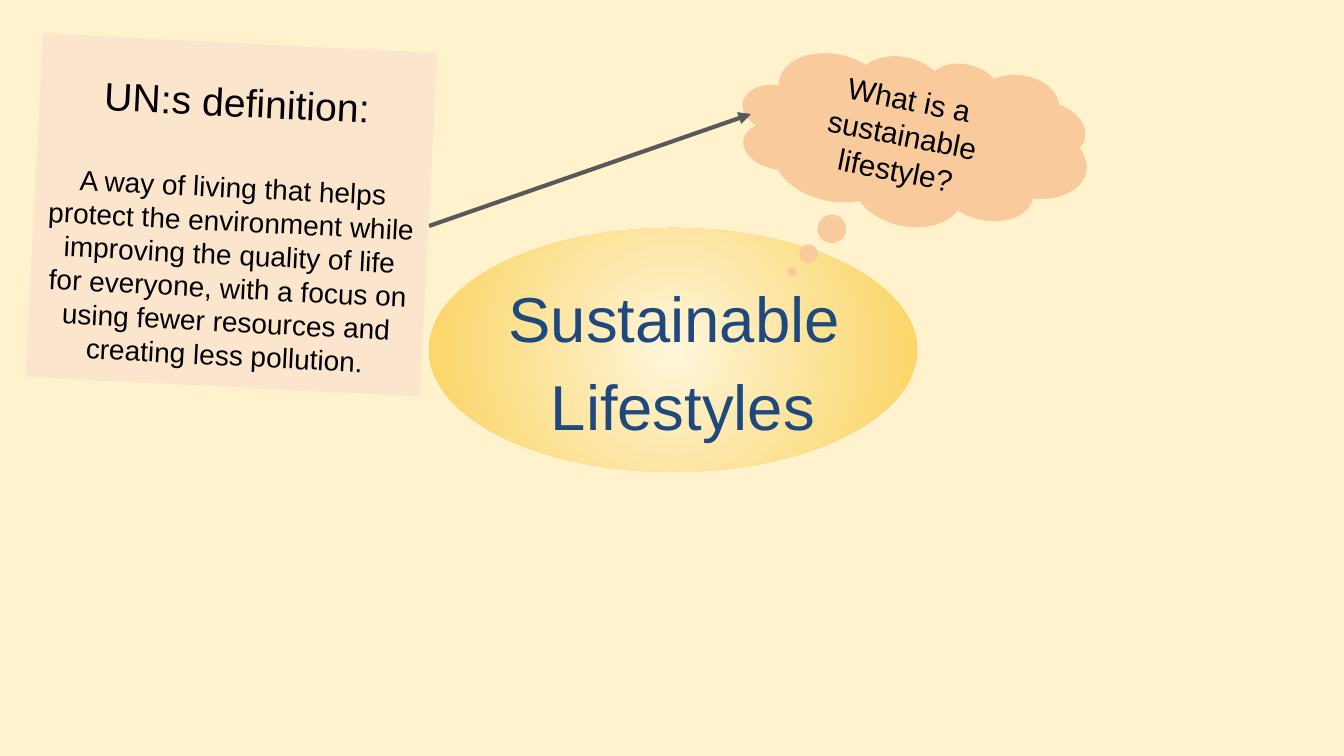
import pptx
import pptx.dml.color
import pptx.enum.shapes
import pptx.enum.text
import pptx.oxml
import pptx.oxml.ns
import pptx.util

EMU_PER_INCH = 914400
PX_PER_INCH = 134.4
SHAPES = pptx.enum.shapes.MSO_SHAPE
ANCHORS = pptx.enum.text.MSO_ANCHOR
NAMESPACE = pptx.oxml.ns.nsdecls("a")


def px(length):
    return pptx.util.Emu(round(length * EMU_PER_INCH / PX_PER_INCH))


def color(value):
    return pptx.dml.color.RGBColor.from_string(value)


class MindMap:
    """Draws the elements of a mind map on one slide in a shared style."""

    font = "Arial"
    margin = 13

    def __init__(self, presentation, background):
        self.slide = presentation.slides.add_slide(presentation.slide_layouts[6])
        self.slide.background.fill.solid()
        self.slide.background.fill.fore_color.rgb = color(background)

    def shape(self, kind, box, fill, rotation=0):
        shape = self.slide.shapes.add_shape(kind, *map(px, box))
        shape.shadow.inherit = False
        shape.rotation = rotation
        shape.line.fill.background()
        if fill:
            shape.fill.solid()
            shape.fill.fore_color.rgb = color(fill)
        return shape

    def glowing_ellipse(self, box, center, edge):
        shape = self.shape(SHAPES.OVAL, box, None)
        shape.fill.gradient()
        for stop, value in zip(shape.fill.gradient_stops, (center, edge)):
            stop.color.rgb = color(value)
        gradient = shape.element.spPr.find(pptx.oxml.ns.qn("a:gradFill"))
        gradient.remove(gradient.find(pptx.oxml.ns.qn("a:lin")))
        gradient.append(pptx.oxml.parse_xml(
            f'<a:path {NAMESPACE} path="circle">'
            '<a:fillToRect l="50000" t="50000" r="50000" b="50000"/></a:path>'))

    def text_box(self, box, paragraphs, **formats):
        shape = self.slide.shapes.add_textbox(*map(px, box))
        self.add_text(shape, paragraphs, **formats)

    def add_text(self, shape, paragraphs, text_color="000000", anchor=ANCHORS.TOP,
                 top_margin=margin):
        frame = shape.text_frame
        frame_format = {
            "word_wrap": True,
            "vertical_anchor": anchor,
            "margin_left": px(self.margin),
            "margin_right": px(self.margin),
            "margin_top": px(top_margin),
            "margin_bottom": px(self.margin),
        }
        for name, value in frame_format.items():
            setattr(frame, name, value)
        for index, (text, size, paragraph_format) in enumerate(paragraphs):
            paragraph = frame.add_paragraph() if index else frame.paragraphs[0]
            paragraph.alignment = pptx.enum.text.PP_ALIGN.CENTER
            for name, value in paragraph_format.items():
                setattr(paragraph, name, value)
            run = paragraph.add_run()
            run.text = text
            for name, value in {"name": self.font, "size": pptx.util.Pt(size)}.items():
                setattr(run.font, name, value)
            run.font.color.rgb = color(text_color)

    def arrow(self, start, end, line_color, width):
        connector = self.slide.shapes.add_connector(
            pptx.enum.shapes.MSO_CONNECTOR.STRAIGHT, *map(px, start + end))
        connector.line.color.rgb = color(line_color)
        connector.line.width = pptx.util.Pt(width)
        line = connector.element.spPr.find(pptx.oxml.ns.qn("a:ln"))
        line.append(pptx.oxml.parse_xml(f'<a:tailEnd {NAMESPACE} type="triangle"/>'))
        connector.element.spPr.append(
            pptx.oxml.parse_xml(f"<a:effectLst {NAMESPACE}/>"))
        return connector


def main():
    presentation = pptx.Presentation()
    presentation.slide_width = px(1344)
    presentation.slide_height = px(756)
    mind_map = MindMap(presentation, "FFF2CC")

    mind_map.glowing_ellipse((429, 228, 488, 244), "FFF6DB", "FAD25C")
    title_format = {"line_spacing": 1.15}
    mind_map.text_box(
        (374, 255, 618, 194),
        [("Sustainable ", 34, title_format), ("Lifestyles", 34, title_format)],
        text_color="1F497D")

    question = mind_map.shape(SHAPES.CLOUD_CALLOUT, (739, 55, 350, 171), "F9CB9C", 11.1)
    question.adjustments[0] = -0.27
    question.adjustments[1] = 0.89
    mind_map.add_text(question, [("What is a sustainable lifestyle?", 16, {})],
                      anchor=ANCHORS.MIDDLE)

    arrow_start = (429, 226)
    arrow = mind_map.arrow(arrow_start, (751, 114), "595959", 2.25)

    definition = mind_map.shape(SHAPES.RECTANGLE, (34, 43, 395, 344), "FCE5CD", 2.9)
    mind_map.add_text(definition, [
        ("UN:s definition:", 21, {"space_after": pptx.util.Pt(24)}),
        ("A way of living that helps protect the environment while improving the "
         "quality of life for everyone, with a focus on using fewer resources and "
         "creating less pollution.", 15, {}),
    ], top_margin=35)
    arrow.begin_connect(definition, 3)
    arrow.begin_x, arrow.begin_y = map(px, arrow_start)

    presentation.save("out.pptx")


if __name__ == "__main__":
    main()
